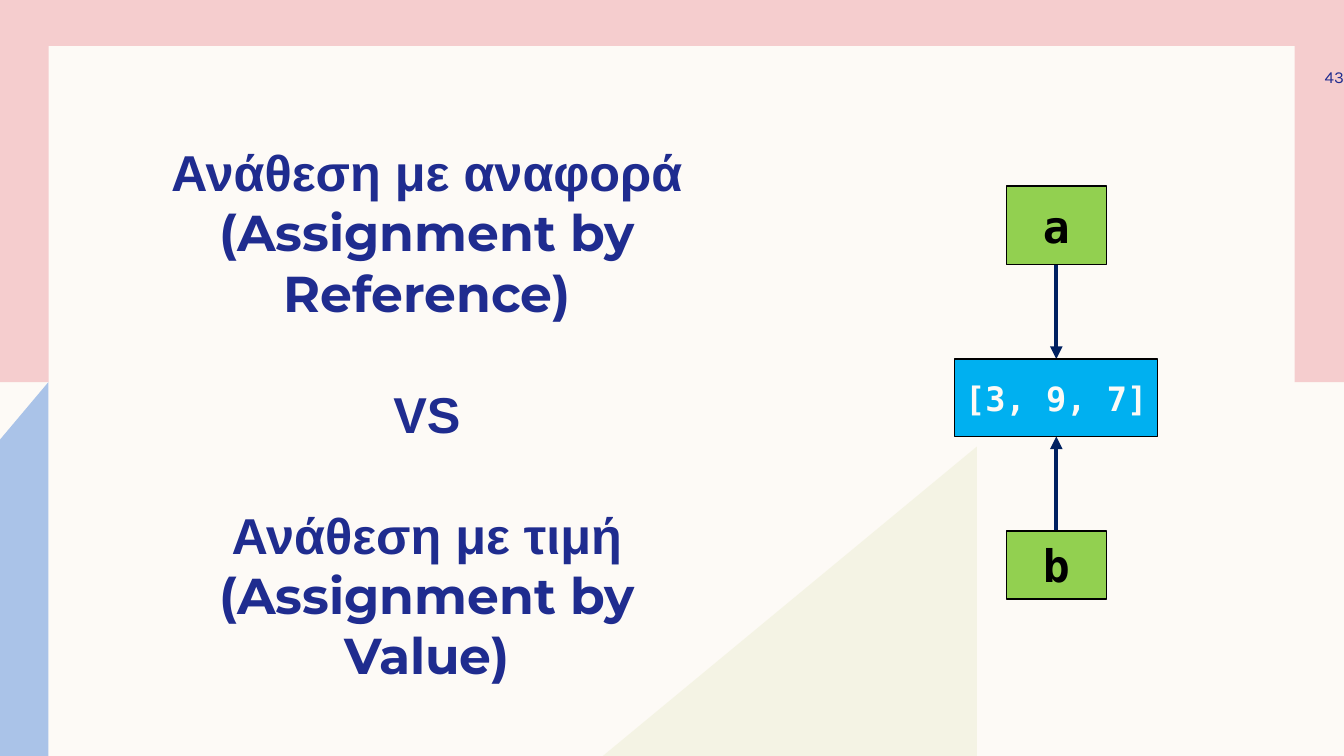
from lxml import etree
from pptx import Presentation
from pptx.dml.color import RGBColor
from pptx.enum.shapes import MSO_CONNECTOR, MSO_SHAPE
from pptx.enum.text import MSO_ANCHOR, PP_ALIGN
from pptx.oxml.ns import qn
from pptx.util import Pt

RECT = MSO_SHAPE.RECTANGLE
STRAIGHT = MSO_CONNECTOR.STRAIGHT
MIDDLE = MSO_ANCHOR.MIDDLE
CENTER, RIGHT = PP_ALIGN.CENTER, PP_ALIGN.RIGHT

COLORS = {
    "cream": "FDFAF6", "pink": "F5CDCE", "olive": "EDEED3", "sky": "AAC3E8",
    "indigo": "1F2C8F", "navy": "002060", "green": "92D050", "cyan": "00B0F0",
    "black": "000000",
}
MONO = "DejaVu Sans Mono"


def paint(sp, fill, line=None):
    sp.shadow.inherit = False
    sp.fill.solid()
    sp.fill.fore_color.rgb = RGBColor.from_string(COLORS[fill])
    if line:
        sp.line.color.rgb = RGBColor.from_string(COLORS[line])
        sp.line.width = Pt(1)
    else:
        sp.line.fill.background()


def add_text(p, text, size=36, font="Arial", color="indigo", bold=True, align=CENTER):
    p.alignment = align
    r = p.add_run()
    r.text = text
    r.font.size = Pt(size)
    r.font.name = font
    r.font.bold = bold
    r.font.color.rgb = RGBColor.from_string(COLORS[color])


prs = Presentation()
prs.slide_width, prs.slide_height = Pt(960), Pt(540)
s = prs.slides.add_slide(prs.slide_layouts[6])
s.background.fill.solid()
s.background.fill.fore_color.rgb = RGBColor.from_string(COLORS["cream"])

# Pink frame with a cream panel
for box, fill in [((0, 0, 960, 273), "pink"), ((34.8, 33, 890, 474.5), "cream")]:
    paint(s.shapes.add_shape(RECT, *map(Pt, box)), fill)

# Corner shapes
corners = [
    ([(430.6, 540), (697.7, 319), (697.7, 540)], "olive", 50),
    ([(34.5, 273), (34.5, 540), (0, 540), (0, 314)], "sky", 100),
]
for points, fill, opacity in corners:
    points = [(Pt(x), Pt(y)) for x, y in points]
    fb = s.shapes.build_freeform(*points[0])
    fb.add_line_segments(points[1:], close=True)
    sp = fb.convert_to_shape()
    paint(sp, fill)
    if opacity < 100:
        color = sp.fill._xPr.find(qn("a:solidFill"))[0]
        etree.SubElement(color, qn("a:alpha")).set("val", str(opacity * 1000))

# Title, one paragraph per idea
LINE_PITCH = Pt(43.2)
title = [
    [("Ανάθεση με αναφορά", "Arial"), ("(Assignment by Reference)", "Montserrat")],
    [("VS", "Arial")],
    [("Ανάθεση με τιμή", "Arial"), ("(Assignment by Value)", "Montserrat")],
]
tf = s.shapes.add_textbox(Pt(98), Pt(73.5), Pt(414), Pt(442.8)).text_frame
tf.word_wrap = True
tf.vertical_anchor = MIDDLE
tf.margin_top = tf.margin_bottom = 0
for i, lines in enumerate(title):
    p = tf.add_paragraph() if i else tf.paragraphs[0]
    p.line_spacing = LINE_PITCH
    p.space_before = LINE_PITCH if i else 0
    for j, (text, font) in enumerate(lines):
        if j:
            p.add_line_break()
        add_text(p, text, font=font)

# Slide number
tf = s.shapes.add_textbox(Pt(876), Pt(36), Pt(84), Pt(37.4)).text_frame
tf.vertical_anchor = MIDDLE
tf.word_wrap = True
tf.margin_right = 0
add_text(tf.paragraphs[0], "43", size=12, font="Karla", bold=False, align=RIGHT)

# Names a and b pointing at the same list
AXIS = 754.5
for start, end in [(189, 256.4), (379.4, 311.8)]:
    cx = s.shapes.add_connector(STRAIGHT, Pt(AXIS), Pt(start), Pt(AXIS), Pt(end))
    cx.line.color.rgb = RGBColor.from_string(COLORS["navy"])
    cx.line.width = Pt(3)
    etree.SubElement(cx.line._get_or_add_ln(), qn("a:tailEnd")).set("type", "triangle")
    etree.SubElement(cx._element.spPr, qn("a:effectLst"))

nodes = [
    ("a", 133, 71.4, 56, "green", "black", 32),
    ("b", 379.4, 71.4, 48.4, "green", "black", 32),
    ("[3, 9, 7]", 256.4, 145, 55.4, "cyan", "cream", 24),
]
for text, top, width, height, fill, color, size in nodes:
    sp = s.shapes.add_shape(RECT, Pt(AXIS - width / 2), Pt(top), Pt(width), Pt(height))
    paint(sp, fill, line="black")
    tf = sp.text_frame
    tf.word_wrap = False
    tf.vertical_anchor = MIDDLE
    add_text(tf.paragraphs[0], text, size=size, font=MONO, color=color)

prs.save("out.pptx")
